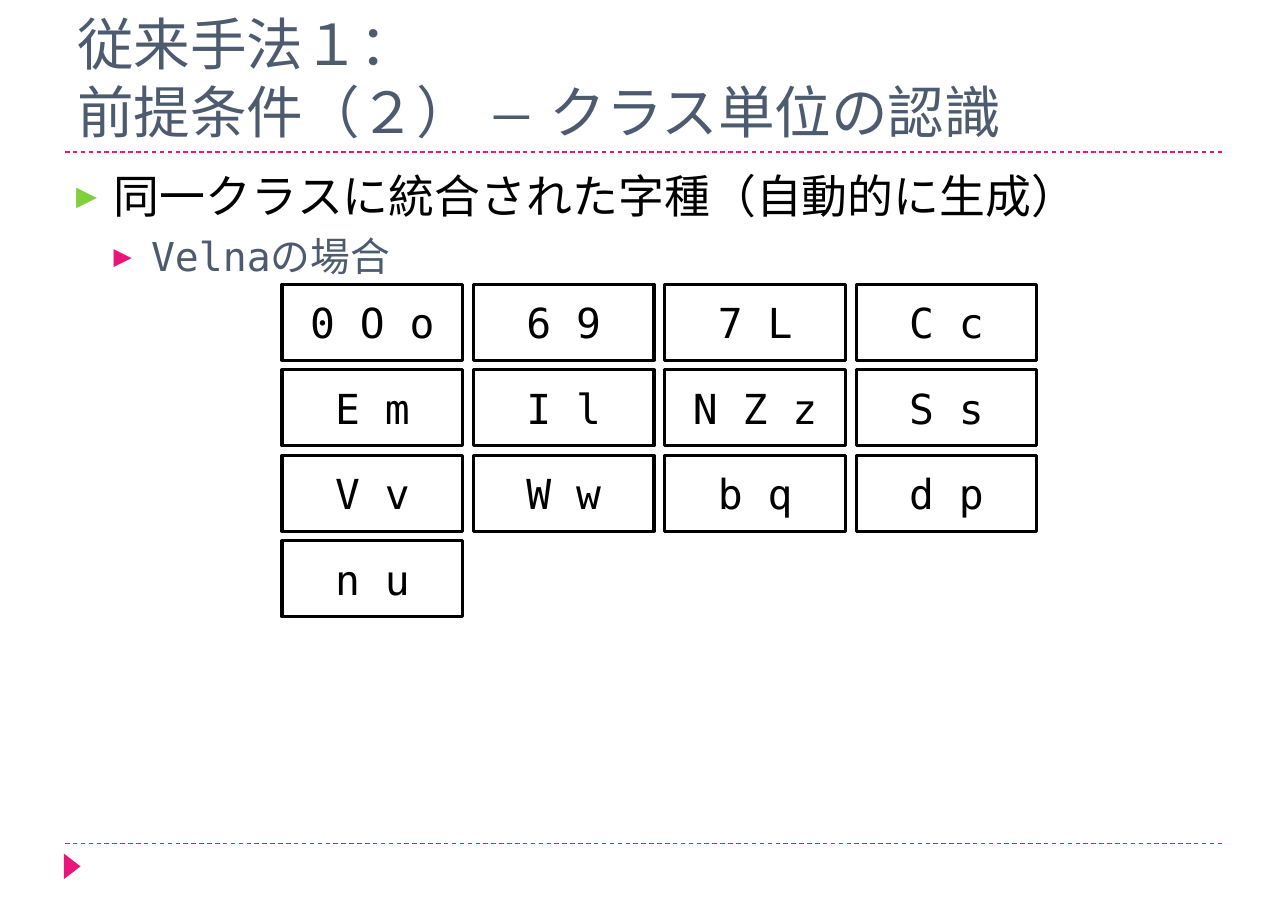
import pptx
import pptx.dml.color
import pptx.enum.dml
import pptx.enum.shapes
import pptx.enum.text
import pptx.oxml
import pptx.oxml.ns
import pptx.util
from lxml import etree

Pt = pptx.util.Pt
qn = pptx.oxml.ns.qn
ALIGN = pptx.enum.text.PP_ALIGN
ANCHOR = pptx.enum.text.MSO_ANCHOR
SHAPE = pptx.enum.shapes.MSO_SHAPE

COLORS = {
    "pink": "EA157A",
    "green": "7FD13B",
    "slate": "4E5B6F",
    "black": "000000",
    "white": "FFFFFF",
}
HEADING_FONT = "Calibri"
BODY_FONT = "DejaVu Sans Mono"

TITLE = "従来手法１：\v前提条件（２） ― クラス単位の認識"
BULLETS = [
    {"text": "同一クラスに統合された字種（自動的に生成）", "size": 30,
     "color": "black", "bullet": "green", "before": 6.9},
    {"text": "Velnaの場合", "size": 26,
     "color": "slate", "bullet": "pink", "before": 5.8},
]
CLASSES = [
    ["0 O o", "6 9", "7 L", "C c"],
    ["E m", "I l", "N Z z", "S s"],
    ["V v", "W w", "b q", "d p"],
    ["n u"],
]

SLIDE_SIZE = (841.68, 595.44)
RULE_LEFT, RULE_RIGHT = 42.5, 800
RULE_HEIGHTS = [551.5, 99.4]
MARKER_BOX = (38.9, 560.9, 16.6, 10.8)
TITLE_BOX = (42.5, 13, 757.5, 85.7)
BODY_BOX = (41.8, 105.8, 758.2, 428.4)
INDENT = 24.5
GRID_LEFT, GRID_TOP = 184.3, 185.8
CELL_WIDTH, CELL_HEIGHT = 118.1, 49.7
PITCH_X, PITCH_Y = 125.05, 55.9


def rgb(name):
    return pptx.dml.color.RGBColor.from_string(COLORS[name])


def points(box):
    return [Pt(value) for value in box]


def set_frame(text_frame, anchor):
    text_frame.word_wrap = True
    text_frame.vertical_anchor = anchor
    text_frame.margin_left = text_frame.margin_right = Pt(7.9)
    text_frame.margin_top = text_frame.margin_bottom = Pt(4)


def format_runs(paragraph, font_name, size, color):
    for run in paragraph.runs:
        run.font.name = font_name
        run.font.size = Pt(size)
        run.font.color.rgb = rgb(color)
        east_asian = etree.Element(qn("a:ea"), typeface=font_name)
        run.font._element.find(qn("a:latin")).addnext(east_asian)


def add_bullet(paragraph, level, color):
    properties = paragraph._p.get_or_add_pPr()
    properties.set("marL", str(Pt(INDENT * (level + 1))))
    properties.set("indent", str(Pt(-INDENT)))
    bullet_color = etree.SubElement(properties, qn("a:buClr"))
    etree.SubElement(bullet_color, qn("a:srgbClr"), val=COLORS[color])
    etree.SubElement(properties, qn("a:buSzPct"), val="76000")
    etree.SubElement(properties, qn("a:buFont"), typeface=BODY_FONT)
    etree.SubElement(properties, qn("a:buChar"), char="▶")


def add_rule(slide, y):
    rule = slide.shapes.add_connector(
        pptx.enum.shapes.MSO_CONNECTOR.STRAIGHT,
        *points((RULE_LEFT, y, RULE_RIGHT, y)))
    rule.line.color.rgb = rgb("pink")
    rule.line.width = Pt(0.75)
    rule.line.dash_style = pptx.enum.dml.MSO_LINE.DASH
    etree.SubElement(rule._element.spPr, qn("a:effectLst"))


def add_marker(slide):
    marker = slide.shapes.add_shape(SHAPE.ISOSCELES_TRIANGLE, *points(MARKER_BOX))
    marker.rotation = 90
    marker.shadow.inherit = False
    marker.fill.solid()
    marker.fill.fore_color.rgb = rgb("pink")
    marker.line.fill.background()


def add_title(slide):
    text_frame = slide.shapes.add_textbox(*points(TITLE_BOX)).text_frame
    set_frame(text_frame, ANCHOR.BOTTOM)
    paragraph = text_frame.paragraphs[0]
    paragraph.text = TITLE
    format_runs(paragraph, HEADING_FONT, 37, "slate")


def add_body(slide):
    text_frame = slide.shapes.add_textbox(*points(BODY_BOX)).text_frame
    set_frame(text_frame, ANCHOR.TOP)
    text_frame.text = "\n".join(item["text"] for item in BULLETS)
    for level, (paragraph, item) in enumerate(zip(text_frame.paragraphs, BULLETS)):
        paragraph.level = level
        paragraph.space_before = Pt(item["before"])
        add_bullet(paragraph, level, item["bullet"])
        format_runs(paragraph, BODY_FONT, item["size"], item["color"])


def add_class(slide, row, column, text):
    box = (GRID_LEFT + column * PITCH_X, GRID_TOP + row * PITCH_Y,
           CELL_WIDTH, CELL_HEIGHT)
    shape = slide.shapes.add_shape(SHAPE.RECTANGLE, *points(box))
    shape.shadow.inherit = False
    shape.fill.solid()
    shape.fill.fore_color.rgb = rgb("white")
    shape.line.color.rgb = rgb("black")
    shape.line.width = Pt(2)
    set_frame(shape.text_frame, ANCHOR.MIDDLE)
    paragraph = shape.text_frame.paragraphs[0]
    paragraph.text = text
    paragraph.alignment = ALIGN.CENTER
    format_runs(paragraph, BODY_FONT, 27, "black")


def main():
    presentation = pptx.Presentation()
    presentation.slide_width, presentation.slide_height = points(SLIDE_SIZE)
    slide = presentation.slides.add_slide(presentation.slide_layouts[6])
    for y in RULE_HEIGHTS:
        add_rule(slide, y)
    add_marker(slide)
    add_title(slide)
    add_body(slide)
    for row, texts in enumerate(CLASSES):
        for column, text in enumerate(texts):
            add_class(slide, row, column, text)
    presentation.save("out.pptx")


if __name__ == "__main__":
    main()
